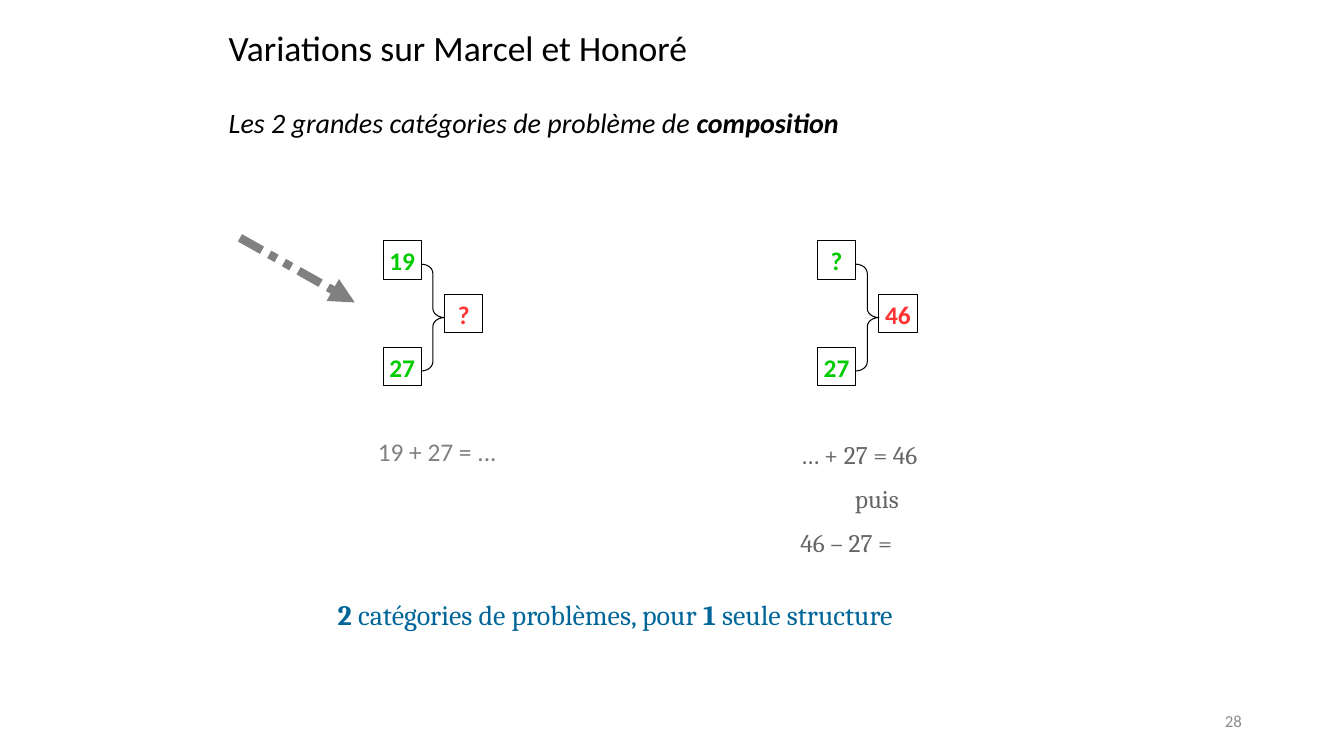
from dataclasses import dataclass

import lxml.etree
import pptx
import pptx.dml.color
import pptx.enum.shapes
import pptx.enum.text
import pptx.oxml.ns
import pptx.util

Pt = pptx.util.Pt
Align = pptx.enum.text.PP_ALIGN
Anchor = pptx.enum.text.MSO_ANCHOR
Preset = pptx.enum.shapes.MSO_SHAPE

COLORS = {
    "black": "000000",
    "part": "00CC00",
    "whole": "FF3333",
    "sum": "808080",
    "steps": "666666",
    "conclusion": "006699",
    "number": "8C8C8C",
}
CELL_SIZE = 27.3
BRACE_WIDTH = 16.6
PART_STEP = 76.3
DIAGRAM_TOP = 172.1
LABEL_SIZE = 18.1


@dataclass
class Span:
    text: str
    bold: bool = False


@dataclass
class Diagram:
    left: float
    first_part: str
    second_part: str
    whole: str


DIAGRAMS = [
    Diagram(273.6, "19", "27", "?"),
    Diagram(583.9, "?", "27", "46"),
]


def rgb(name: str) -> pptx.dml.color.RGBColor:
    return pptx.dml.color.RGBColor.from_string(COLORS[name])


def write(para, spans: list[Span], *, size: float, color: str = "black", font: str = "Calibri",
          italic: bool = False, align=Align.LEFT, before: float = 0, after: float = 0,
          spacing: float = 1.0) -> None:
    para.alignment = align
    para.space_before = Pt(before)
    para.space_after = Pt(after)
    para.line_spacing = spacing
    for span in spans:
        run = para.add_run()
        run.text = span.text
        run.font.name = font
        run.font.size = Pt(size)
        run.font.bold = span.bold
        run.font.italic = italic
        run.font.color.rgb = rgb(color)


def set_frame(frame, insets: tuple[float, float, float, float], anchor=Anchor.TOP,
              wrap: bool = True) -> None:
    """Set the insets (left, top, right, bottom), anchor and wrapping of a text frame."""
    frame.margin_left, frame.margin_top, frame.margin_right, frame.margin_bottom = map(Pt, insets)
    frame.vertical_anchor = anchor
    frame.word_wrap = wrap
    frame.auto_size = pptx.enum.text.MSO_AUTO_SIZE.NONE


def add_text_frame(page, left: float, top: float, width: float, height: float,
                   insets: tuple[float, float, float, float], anchor=Anchor.TOP):
    box = page.shapes.add_textbox(Pt(left), Pt(top), Pt(width), Pt(height))
    set_frame(box.text_frame, insets, anchor)
    return box.text_frame


def add_outline(page, preset, left: float, top: float, width: float, height: float):
    shape = page.shapes.add_shape(preset, Pt(left), Pt(top), Pt(width), Pt(height))
    shape.shadow.inherit = False
    shape.fill.background()
    shape.line.color.rgb = rgb("black")
    shape.line.width = Pt(0.75)
    return shape


def add_cell(page, left: float, top: float, text: str, color: str) -> None:
    cell = add_outline(page, Preset.RECTANGLE, left, top, CELL_SIZE, CELL_SIZE)
    set_frame(cell.text_frame, (6.5, 3.6, 6.5, 2.9), Anchor.MIDDLE, wrap=False)
    write(cell.text_frame.paragraphs[0], [Span(text, True)], size=LABEL_SIZE, color=color,
          align=Align.CENTER)


def add_diagram(page, diagram: Diagram) -> None:
    """Draw two parts, joined by a brace to their whole."""
    add_cell(page, diagram.left, DIAGRAM_TOP, diagram.first_part, "part")
    add_cell(page, diagram.left, DIAGRAM_TOP + PART_STEP, diagram.second_part, "part")
    brace_left = diagram.left + CELL_SIZE
    brace = add_outline(page, Preset.RIGHT_BRACE, brace_left, DIAGRAM_TOP + 16.6,
                        BRACE_WIDTH, PART_STEP)
    brace.adjustments[0] = 0.39
    brace.adjustments[1] = 0.5
    add_cell(page, brace_left + BRACE_WIDTH, DIAGRAM_TOP + PART_STEP / 2, diagram.whole, "whole")


def add_arrow(page, start: tuple[float, float], end: tuple[float, float]) -> None:
    arrow = page.shapes.add_connector(pptx.enum.shapes.MSO_CONNECTOR.STRAIGHT,
                                      *map(Pt, start + end))
    arrow.line.color.rgb = rgb("sum")
    arrow.line.width = Pt(6)
    qn = pptx.oxml.ns.qn
    properties = arrow._element.spPr
    line = properties.find(qn("a:ln"))
    lxml.etree.SubElement(line, qn("a:prstDash"), val="sysDashDotDot")
    lxml.etree.SubElement(line, qn("a:tailEnd"), type="triangle")
    lxml.etree.SubElement(properties, qn("a:effectLst"))


def add_title(page) -> None:
    title = page.shapes.title
    title.left, title.top, title.width, title.height = map(Pt, (156.2, 20.9, 648, 82.8))
    frame = title.text_frame
    set_frame(frame, (7.2, 0.7, 7.2, 3.6), Anchor.MIDDLE)
    write(frame.paragraphs[0], [Span("Variations sur Marcel et Honoré")], size=25.4, spacing=0.9)
    write(frame.add_paragraph(),
          [Span("Les 2 grandes catégories de problème de "), Span("composition", True)],
          size=20, italic=True, before=28, spacing=0.9)


def add_texts(page) -> None:
    number = add_text_frame(page, 678.2, 500.4, 216, 28.8, (7.2, 3.6, 7.2, 3.6), Anchor.MIDDLE)
    write(number.paragraphs[0], [Span("28")], size=12, color="number", align=Align.RIGHT)

    addition = add_text_frame(page, 262.8, 313.2, 109.4, 36.7, (7.2, 0.7, 7.2, 3.6))
    write(addition.paragraphs[0], [Span("19 + 27 = ...")], size=LABEL_SIZE, color="sum",
          spacing=0.9)

    steps = add_text_frame(page, 571.7, 313.2, 109.4, 83.5, (0, 0.7, 0, 0))
    lines = [("… + 27 = 46", Align.LEFT), ("puis", Align.CENTER), ("46 – 27 =", Align.LEFT)]
    for index, (text, align) in enumerate(lines):
        para = steps.add_paragraph() if index else steps.paragraphs[0]
        write(para, [Span(text)], size=LABEL_SIZE, color="steps", font="Cambria",
              align=align, after=9.6)

    conclusion = add_text_frame(page, 234.7, 423.4, 477.4, 34.6, (6.5, 3.6, 6.5, 2.9))
    write(conclusion.paragraphs[0],
          [Span("2", True), Span(" catégories de problèmes, pour "),
           Span("1", True), Span(" seule structure")],
          size=20, color="conclusion", font="Cambria")


def main() -> None:
    deck = pptx.Presentation()
    deck.slide_width, deck.slide_height = Pt(960), Pt(540)
    page = deck.slides.add_slide(deck.slide_layouts.get_by_name("Title Only"))
    add_title(page)
    add_texts(page)
    for diagram in DIAGRAMS:
        add_diagram(page, diagram)
    add_arrow(page, (171.4, 169.9), (253.4, 216))
    deck.save("out.pptx")


if __name__ == "__main__":
    main()
